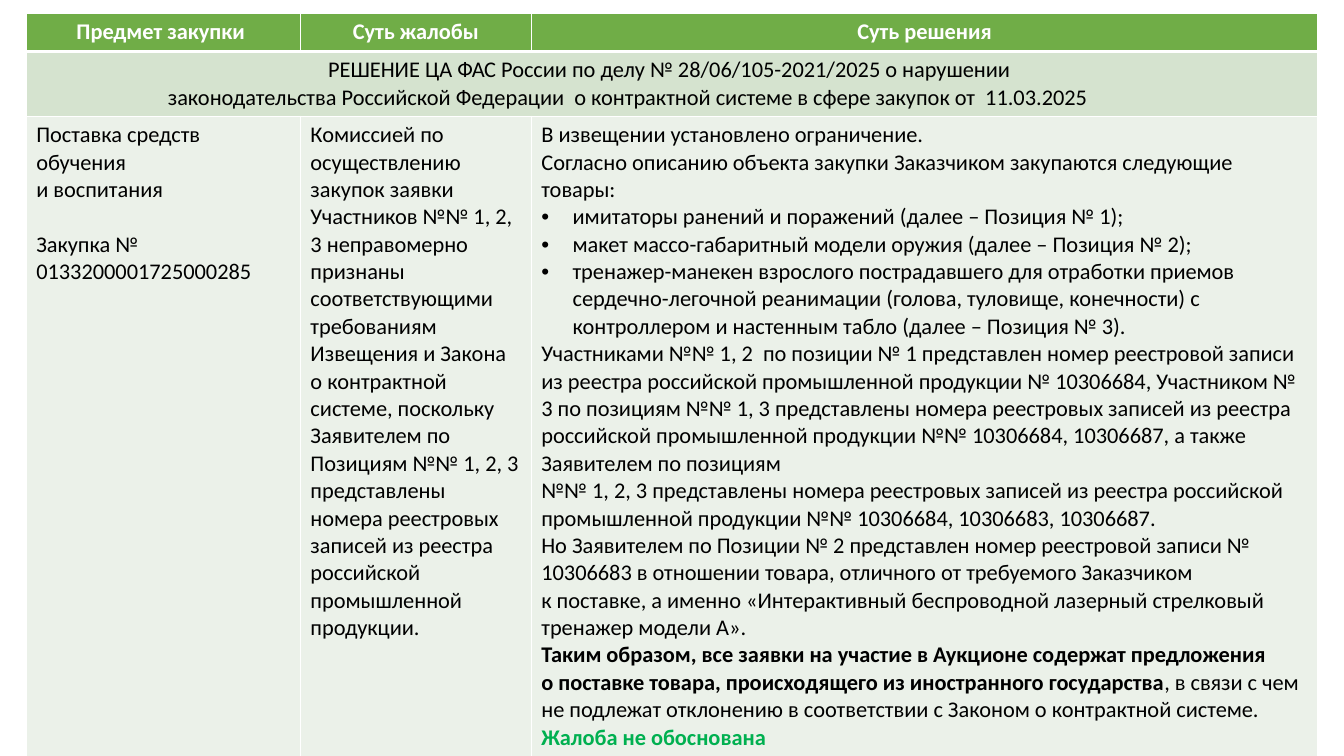
"""Build a slide with a table summarising a procurement complaint decision."""
import pptx
import pptx.dml.color
import pptx.enum.text
import pptx.oxml
import pptx.oxml.ns
import pptx.util
from dataclasses import dataclass

Inches = pptx.util.Inches
Pt = pptx.util.Pt
CENTER = pptx.enum.text.PP_ALIGN.CENTER


@dataclass(frozen=True)
class Theme:
    font: str = "Calibri"
    size: int = 16
    blank_line: float = 19.5
    white: str = "FFFFFF"
    black: str = "000000"
    header: str = "70AD47"
    band: str = "D5E3CF"
    body: str = "EBF1E9"
    verdict: str = "00B050"
    thin: int = 1
    thick: int = 3


theme = Theme()
namespace = pptx.oxml.ns.nsdecls("a")


def add_text(cell, text, color=theme.black, bold=False, alignment=None, bullet=False,
             tab_stop=None, space_before=None, same_paragraph=False):
    frame = cell.text_frame
    paragraph = frame.paragraphs[-1]
    if paragraph.runs and not same_paragraph:
        paragraph = frame.add_paragraph()
    if bullet:
        properties = paragraph._p.get_or_add_pPr()
        properties.set("marL", str(Inches(0.31)))
        properties.set("indent", str(-Inches(0.31)))
        for tag in ('buFont typeface="Arial"', 'buChar char="•"'):
            properties.append(pptx.oxml.parse_xml(f"<a:{tag} {namespace}/>"))
    if tab_stop is not None:
        paragraph._p.get_or_add_pPr().append(pptx.oxml.parse_xml(
            f'<a:tabLst {namespace}><a:tab pos="{Inches(tab_stop)}" algn="l"/></a:tabLst>'))
    if alignment is not None:
        paragraph.alignment = alignment
    if space_before is not None:
        paragraph.space_before = Pt(space_before)
    run = paragraph.add_run()
    run.text = text
    run.font.name = theme.font
    run.font.size = Pt(theme.size)
    run.font.bold = bold
    run.font.color.rgb = pptx.dml.color.RGBColor.from_string(color)


def format_cell(cell, fill, bottom=theme.thin):
    properties = cell._tc.get_or_add_tcPr()
    for side, width in zip("LRTB", (theme.thin, theme.thin, theme.thin, bottom)):
        properties.append(pptx.oxml.parse_xml(
            f'<a:ln{side} {namespace} w="{Pt(width)}"><a:solidFill>'
            f'<a:srgbClr val="{theme.white}"/></a:solidFill></a:ln{side}>'))
    cell.fill.solid()
    cell.fill.fore_color.rgb = pptx.dml.color.RGBColor.from_string(fill)


presentation = pptx.Presentation()
presentation.slide_width = Inches(13.33)
presentation.slide_height = Inches(7.5)
slide = presentation.slides.add_slide(presentation.slide_layouts[6])

column_widths = (2.72, 2.29, 7.8)
row_heights = (0.38, 0.63, 6.24)
table = slide.shapes.add_table(
    len(row_heights), len(column_widths), Inches(0.26), Inches(0.13),
    Inches(sum(column_widths)), Inches(sum(row_heights))).table
for column, width in zip(table.columns, column_widths):
    column.width = Inches(width)
for row, height in zip(table.rows, row_heights):
    row.height = Inches(height)

for row, fill, bottom in zip(table.rows, (theme.header, theme.band, theme.body),
                             (theme.thick, theme.thin, theme.thin)):
    for cell in row.cells:
        format_cell(cell, fill, bottom)

headings = ("Предмет закупки ", "Суть жалобы", "Суть решения")
for cell, heading in zip(table.rows[0].cells, headings):
    add_text(cell, heading, color=theme.white, bold=True, alignment=CENTER)

case_cell = table.cell(1, 0)
case_cell.merge(table.cell(1, 2))
add_text(case_cell, "РЕШЕНИЕ ЦА ФАС России по делу № 28/06/105-2021/2025 о нарушении ",
         alignment=CENTER)
add_text(case_cell, (
    "законодательства Российской Федерации  о контрактной системе в сфере закупок "
    "от  11.03.2025\t"), alignment=CENTER, tab_stop=10)

subject_cell, complaint_cell, decision_cell = table.rows[2].cells
add_text(subject_cell, "Поставка средств обучения")
add_text(subject_cell, "и воспитания")
add_text(subject_cell, "Закупка № 0133200001725000285", space_before=theme.blank_line)

add_text(complaint_cell, (
    "Комиссией по осуществлению закупок заявки Участников №№ 1, 2, 3 неправомерно "
    "признаны соответствующими требованиям Извещения и Закона о контрактной системе, "
    "поскольку Заявителем по Позициям №№ 1, 2, 3 представлены номера реестровых "
    "записей из реестра российской промышленной продукции."))

decision = (
    ("В извещении установлено ограничение.", {}),
    ("Согласно описанию объекта закупки Заказчиком закупаются следующие товары:", {}),
    ("имитаторы ранений и поражений (далее – Позиция № 1);", {"bullet": True}),
    ("макет массо-габаритный модели оружия (далее – Позиция № 2);", {"bullet": True}),
    ("тренажер-манекен взрослого пострадавшего для отработки приемов "
     "сердечно-легочной реанимации (голова, туловище, конечности) с контроллером "
     "и настенным табло (далее – Позиция № 3).", {"bullet": True}),
    ("Участниками №№ 1, 2  по позиции № 1 представлен номер реестровой записи из "
     "реестра российской промышленной продукции № 10306684, Участником № 3 по "
     "позициям №№ 1, 3 представлены номера реестровых записей из реестра российской "
     "промышленной продукции №№ 10306684, 10306687, а также Заявителем по позициям", {}),
    ("№№ 1, 2, 3 представлены номера реестровых записей из реестра российской "
     "промышленной продукции №№ 10306684, 10306683, 10306687.", {}),
    ("Но Заявителем по Позиции № 2 представлен номер реестровой записи № 10306683 "
     "в отношении товара, отличного от требуемого Заказчиком", {}),
    ("к поставке, а именно «Интерактивный беспроводной лазерный стрелковый "
     "тренажер модели А».", {}),
    ("Таким образом, все заявки на участие в Аукционе содержат предложения",
     {"bold": True}),
    ("о поставке товара, происходящего из иностранного государства", {"bold": True}),
    (", в связи с чем", {"same_paragraph": True}),
    ("не подлежат отклонению в соответствии с Законом о контрактной системе.", {}),
    ("Жалоба не обоснована", {"color": theme.verdict, "bold": True}),
)
for text, text_format in decision:
    add_text(decision_cell, text, **text_format)

presentation.save("out.pptx")
